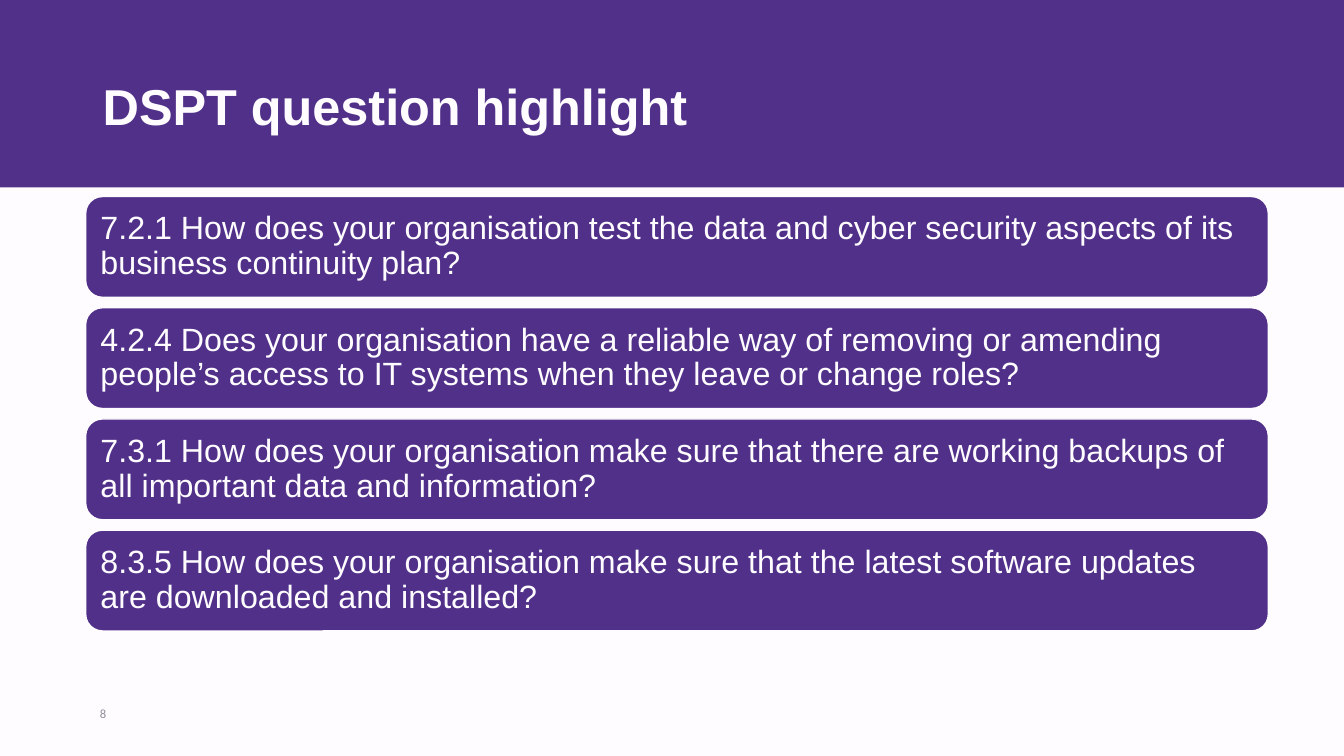
from pptx import Presentation
from pptx.dml.color import RGBColor
from pptx.enum.shapes import MSO_SHAPE as Preset
from pptx.enum.text import MSO_ANCHOR as Anchor, PP_ALIGN as Align
from pptx.util import Inches, Pt

COLOURS = {"purple": "513089", "white": "FEFCFF", "grey": "8E8E9A"}

QUESTIONS = [
    "7.2.1 How does your organisation test the data and cyber security aspects of its business continuity plan?",
    "4.2.4 Does your organisation have a reliable way of removing or amending people’s access to IT systems when they leave or change roles?",
    "7.3.1 How does your organisation make sure that there are working backups of all important data and information?",
    "8.3.5 How does your organisation make sure that the latest software updates are downloaded and installed?",
]


def colour(name):
    return RGBColor.from_string(COLOURS[name])


def write(holder, text, font, ink, inset, spacing=1.0):
    frame = holder.text_frame
    layout = {
        "word_wrap": True,
        "vertical_anchor": Anchor.MIDDLE,
        "margin_left": Inches(inset[0]),
        "margin_right": Inches(inset[0]),
        "margin_top": Inches(inset[1]),
        "margin_bottom": Inches(inset[1]),
    }
    for key, value in layout.items():
        setattr(frame, key, value)
    line = frame.paragraphs[0]
    line.alignment = Align.LEFT
    line.line_spacing = spacing
    run = line.add_run()
    run.text = text
    for key, value in font.items():
        setattr(run.font, key, value)
    run.font.color.rgb = colour(ink)


def add_panel(slide, preset, left, top, width, height):
    panel = slide.shapes.add_shape(
        preset, Inches(left), Inches(top), Inches(width), Inches(height))
    panel.shadow.inherit = False
    panel.fill.solid()
    panel.fill.fore_color.rgb = colour("purple")
    return panel


def add_header(slide, left, top, width, height):
    band = add_panel(slide, Preset.RECTANGLE, left, top, width, height)
    band.line.fill.background()
    title = slide.shapes.add_textbox(
        Inches(left + 0.92), Inches(top + 0.42), Inches(10.24), Inches(1.3))
    write(title, "DSPT question highlight",
          {"name": "Arial", "size": Pt(36), "bold": True}, "white", (0.1, 0.05))


def add_questions(slide, left, top, width, height, card_height=1):
    pitch = (height - card_height) / (len(QUESTIONS) - 1)
    for row, question in enumerate(QUESTIONS):
        card = add_panel(slide, Preset.ROUNDED_RECTANGLE,
                         left, top + row * pitch, width, card_height)
        card.line.color.rgb = colour("white")
        card.line.width = Pt(1)
        write(card, question, {"name": "Arial", "size": Pt(23)},
              "white", (0.1, 0.1), 0.9)


def add_page_number(slide, left, top, width, height):
    number = slide.shapes.add_textbox(
        Inches(left), Inches(top), Inches(width), Inches(height))
    write(number, "8", {"name": "Calibri", "size": Pt(9)}, "grey", (0.07, 0.04))


def main():
    deck = Presentation()
    deck.slide_width = Inches(13.33)
    deck.slide_height = Inches(7.5)
    slide = deck.slides.add_slide(deck.slide_layouts[6])
    slide.background.fill.solid()
    slide.background.fill.fore_color.rgb = colour("white")
    add_header(slide, 0, -0.02, 13.33, 1.88)
    add_questions(slide, 0.85, 1.95, 11.73, 4.31)
    add_page_number(slide, 0.92, 6.88, 3, 0.4)
    deck.save("out.pptx")


if __name__ == "__main__":
    main()
